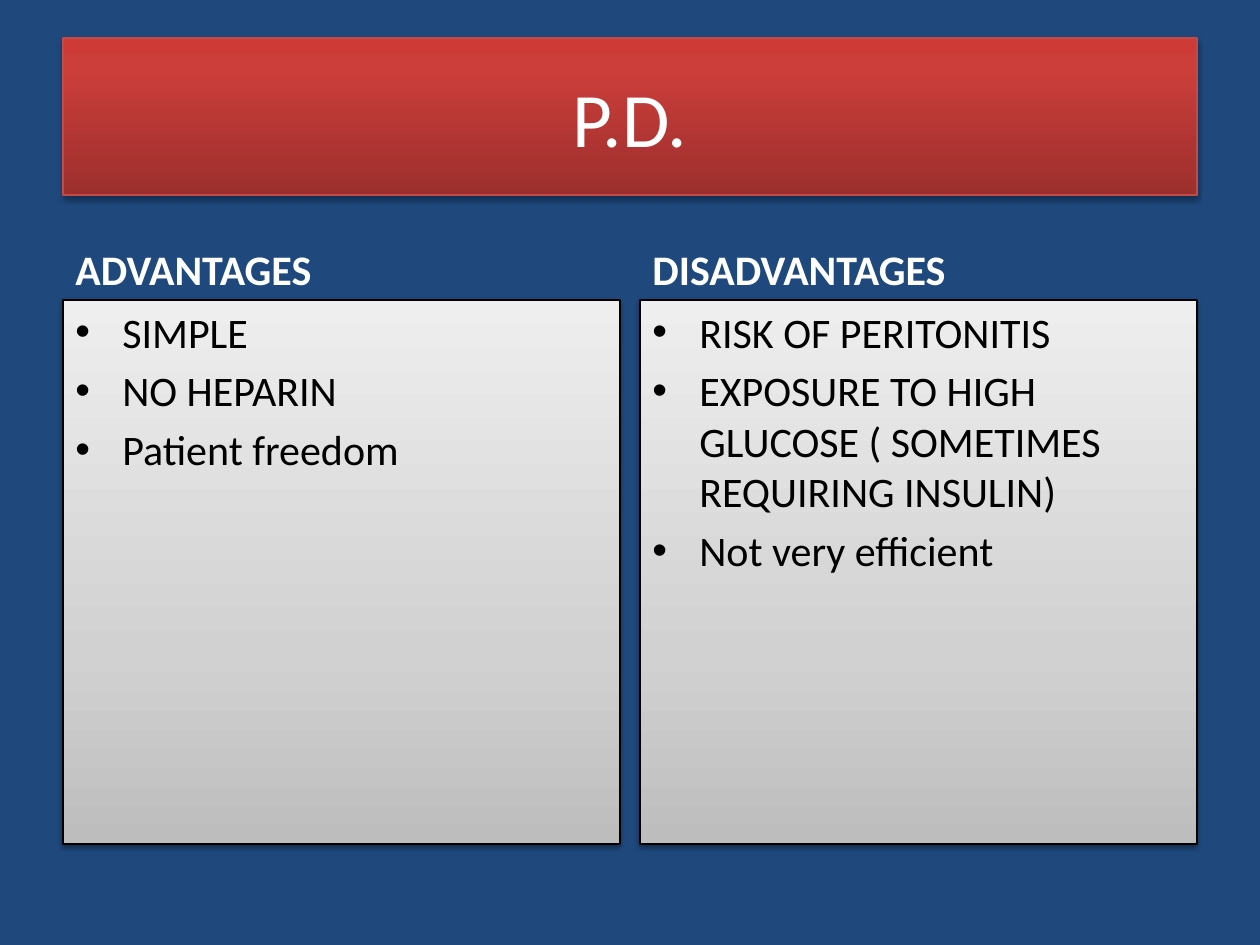
from lxml.etree import SubElement
from pptx import Presentation
from pptx.dml.color import RGBColor
from pptx.enum.shapes import MSO_SHAPE
from pptx.enum.text import MSO_ANCHOR, PP_ALIGN
from pptx.oxml.ns import qn
from pptx.util import Emu, Pt

EMU_PER_PX = 914400 / 126
FONT = "Calibri"
COLORS = {
    "background": "1F497D",
    "light_text": "FFFFFF",
    "dark_text": "000000",
    "title_line": "BF4C48",
    "panel_line": "000000",
    "shadow": "000000",
}
# Gradient stops run from bottom to top.
TITLE_GRADIENT = [(0, "9C2F2D"), (80, "CB3E3A"), (100, "CE3B37")]
PANEL_GRADIENT = [(0, "BDBDBD"), (35, "D1D1D1"), (100, "EEEEEE")]

LEFT, WIDTH = 63, 1134
COLUMN_WIDTH, COLUMN_STEP = 557, 577
HEADING_TOP, HEADING_HEIGHT = 212, 88
PANEL_TOP, PANEL_HEIGHT = 300, 544
BULLET_INDENT = 47

COLUMNS = [
    ("ADVANTAGES", ["SIMPLE", "NO HEPARIN", "Patient freedom"]),
    ("DISADVANTAGES", [
        "RISK OF PERITONITIS",
        "EXPOSURE TO HIGH GLUCOSE ( SOMETIMES REQUIRING INSULIN)",
        "Not very efficient",
    ]),
]


def px(length):
    return Emu(round(length * EMU_PER_PX))


def color(name):
    return RGBColor.from_string(COLORS[name])


def set_gradient(shape, stops):
    shape.fill.background()
    properties = shape._element.spPr
    gradient = properties.makeelement(qn("a:gradFill"), {"rotWithShape": "1"})
    stop_list = SubElement(gradient, qn("a:gsLst"))
    for position, value in stops:
        stop = SubElement(stop_list, qn("a:gs"), pos=str(position * 1000))
        SubElement(stop, qn("a:srgbClr"), val=value)
    SubElement(gradient, qn("a:lin"), ang=str(270 * 60000), scaled="0")
    properties.replace(properties.find(qn("a:noFill")), gradient)


def set_shadow(shape, distance, opacity):
    shape.shadow.inherit = False
    effects = shape._element.spPr.find(qn("a:effectLst"))
    shadow = SubElement(
        effects, qn("a:outerShdw"), blurRad=str(Pt(3.1)),
        dist=str(Pt(distance)), dir=str(90 * 60000), rotWithShape="0")
    shadow_color = SubElement(shadow, qn("a:srgbClr"), val=COLORS["shadow"])
    SubElement(shadow_color, qn("a:alpha"), val=str(opacity * 1000))


def add_panel(slide, box, gradient, line_color, shadow):
    """Add a gradient rectangle; shadow is (distance in points, opacity in percent)."""
    shape = slide.shapes.add_shape(MSO_SHAPE.RECTANGLE, *map(px, box))
    set_gradient(shape, gradient)
    shape.line.color.rgb = color(line_color)
    shape.line.width = Pt(0.75)
    set_shadow(shape, *shadow)
    return shape


def add_run(paragraph, text, size, color_name, bold=False):
    run = paragraph.add_run()
    run.text = text
    run.font.name = FONT
    run.font.size = Pt(size)
    run.font.bold = bold
    run.font.color.rgb = color(color_name)


def set_bullet(paragraph):
    properties = paragraph._p.get_or_add_pPr()
    properties.set("marL", str(px(BULLET_INDENT)))
    properties.set("indent", str(-px(BULLET_INDENT)))
    SubElement(properties, qn("a:buFont"), typeface="Arial")
    SubElement(properties, qn("a:buChar"), char="•")


def add_title(slide, text):
    shape = add_panel(slide, (LEFT, 38, WIDTH, 157), TITLE_GRADIENT,
                      "title_line", (1.8, 35))
    shape.text_frame.vertical_anchor = MSO_ANCHOR.MIDDLE
    paragraph = shape.text_frame.paragraphs[0]
    paragraph.alignment = PP_ALIGN.CENTER
    add_run(paragraph, text, 44, "light_text")


def add_heading(slide, left, text):
    box = (left, HEADING_TOP, COLUMN_WIDTH, HEADING_HEIGHT)
    frame = slide.shapes.add_textbox(*map(px, box)).text_frame
    frame.word_wrap = True
    frame.vertical_anchor = MSO_ANCHOR.BOTTOM
    add_run(frame.paragraphs[0], text, 24, "light_text", bold=True)


def add_bullet_panel(slide, left, items):
    box = (left, PANEL_TOP, COLUMN_WIDTH, PANEL_HEIGHT)
    shape = add_panel(slide, box, PANEL_GRADIENT, "panel_line", (1.6, 38))
    frame = shape.text_frame
    frame.word_wrap = True
    frame.vertical_anchor = MSO_ANCHOR.TOP
    for index, item in enumerate(items):
        paragraph = frame.add_paragraph() if index else frame.paragraphs[0]
        set_bullet(paragraph)
        paragraph.alignment = PP_ALIGN.LEFT
        if index:
            paragraph.space_before = Pt(4.8)
        add_run(paragraph, item, 24, "dark_text")


def main():
    presentation = Presentation()
    presentation.slide_width = px(1260)
    presentation.slide_height = px(945)
    slide = presentation.slides.add_slide(presentation.slide_layouts[6])
    slide.background.fill.solid()
    slide.background.fill.fore_color.rgb = color("background")

    add_title(slide, "P.D.")
    for index, (heading, items) in enumerate(COLUMNS):
        left = LEFT + index * COLUMN_STEP
        add_heading(slide, left, heading)
        add_bullet_panel(slide, left, items)
    presentation.save("out.pptx")


if __name__ == "__main__":
    main()
